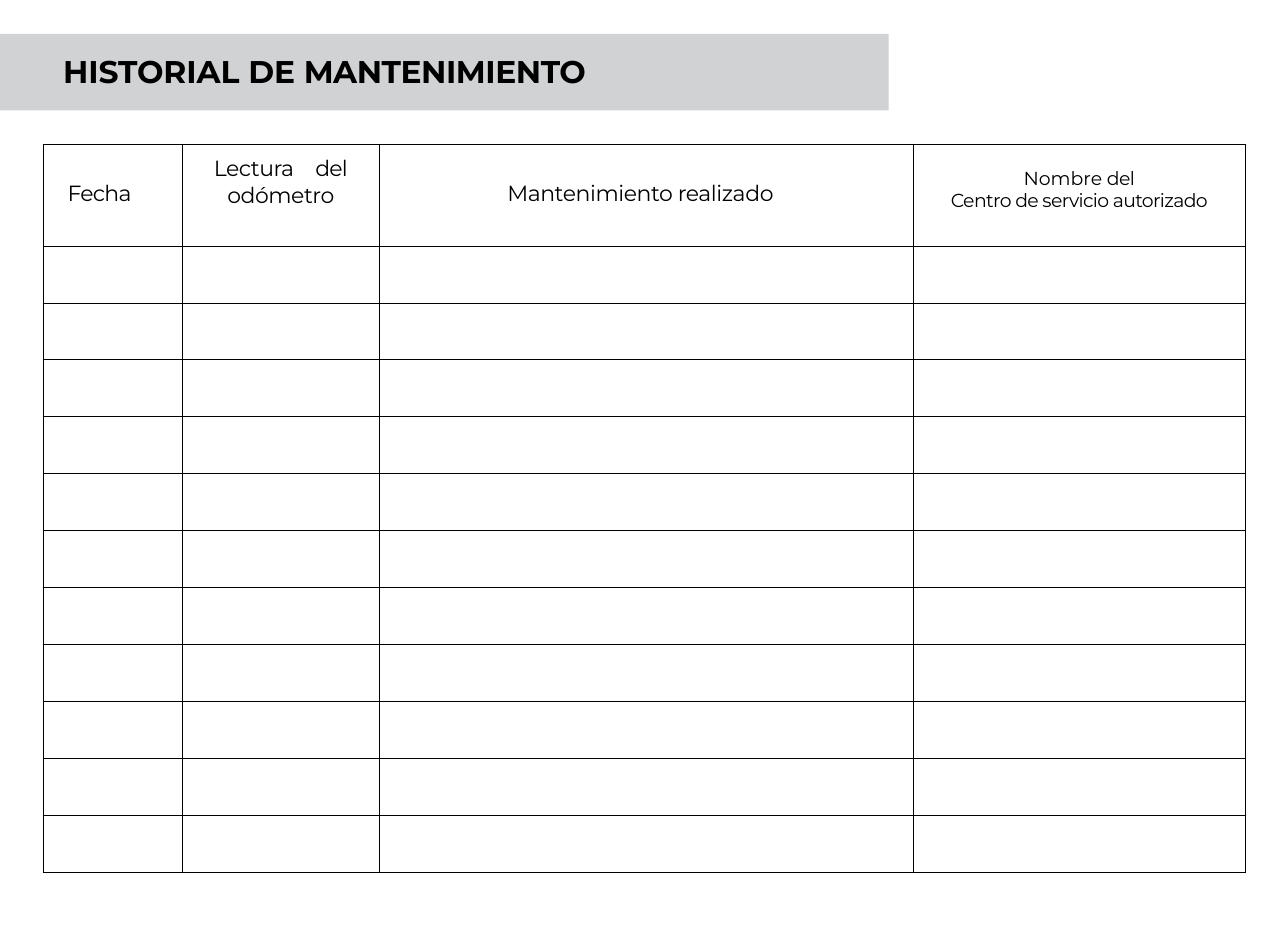
from dataclasses import dataclass

from lxml import etree
from pptx import Presentation
from pptx import util as u
from pptx.dml.color import RGBColor
from pptx.enum import shapes, text
from pptx.oxml.ns import qn

# Runs are (wording, letter spacing in points).
TITLE = [("HISTORIAL DE ", 0), ("MANTENIMIENTO", -0.1)]
# Each heading: lines of runs, type size, top margin, left margin (None = centred).
HEADINGS = [
    ([[("Fecha", -0.2)]], 7, 0.16, 0.11),
    ([[("Lectura", -0.1), (" ", 5), ("del", -0.2)], [("odómetro", -0.1)]], 7, 0.05, None),
    ([[("Mantenimiento realizado", -0.1)]], 7, 0.16, 0.57),
    ([[("Nombre ", 0), ("del", -0.2)],
      [("Centro de servicio autorizado", -0.2)]], 6, 0.1, None),
]
ENTRY_ROWS = 11

PAGE_W, PAGE_H = 5.71, 4.14
BAND = (0, 0.15, 3.94, 0.34)
TITLE_BOX = (0.28, 0.23, 2.35, 0.19)
TABLE_LEFT, TABLE_TOP, TABLE_H = 0.19, 0.64, 3.23
HEADER_H = 0.45
COLUMNS = [0.62, 0.87, 2.37, 1.47]


@dataclass(frozen=True)
class Theme:
    font: str = "Montserrat"
    ink: str = "000000"
    band: str = "D1D2D3"
    title_size: int = 10
    entry_size: int = 7
    rule: float = 0.25


THEME = Theme()


def inches(lengths):
    return [u.Inches(length) for length in lengths]


def write_runs(para, runs, size, bold=False):
    for wording, spacing in runs:
        span = para.add_run()
        span.text = wording
        span.font.name = THEME.font
        span.font.size = u.Pt(size)
        span.font.bold = bold
        span.font.color.rgb = RGBColor.from_string(THEME.ink)
        span.font._element.set("spc", str(round(spacing * 100)))


def draw_borders(cell):
    props = cell._tc.get_or_add_tcPr()
    for place, side in enumerate(("lnL", "lnR", "lnT", "lnB")):
        line = etree.Element(qn(f"a:{side}"), w=str(u.Pt(THEME.rule)))
        fill = etree.SubElement(line, qn("a:solidFill"))
        etree.SubElement(fill, qn("a:srgbClr"), val=THEME.ink)
        props.insert(place, line)


def add_title(page):
    band = page.shapes.add_shape(shapes.MSO_SHAPE.RECTANGLE, *inches(BAND))
    band.shadow.inherit = False
    band.fill.solid()
    band.fill.fore_color.rgb = RGBColor.from_string(THEME.band)
    band.line.fill.background()

    frame = page.shapes.add_textbox(*inches(TITLE_BOX)).text_frame
    frame.margin_left = frame.margin_right = frame.margin_top = frame.margin_bottom = 0
    write_runs(frame.paragraphs[0], TITLE, THEME.title_size, bold=True)


def fill_heading(cell, lines, size, top, left):
    cell.margin_top = u.Inches(top)
    cell.margin_left = u.Inches(left or 0)
    frame = cell.text_frame
    for number, runs in enumerate(lines):
        para = frame.add_paragraph() if number else frame.paragraphs[0]
        if left is None:
            para.alignment = text.PP_ALIGN.CENTER
        write_runs(para, runs, size)


def add_log(page):
    frame = page.shapes.add_table(
        ENTRY_ROWS + 1, len(COLUMNS),
        *inches((TABLE_LEFT, TABLE_TOP, sum(COLUMNS), TABLE_H)))
    log = frame.table
    log.first_row = log.horz_banding = False
    for column, width in zip(log.columns, COLUMNS):
        column.width = u.Inches(width)
    for number, row in enumerate(log.rows):
        row.height = u.Inches((TABLE_H - HEADER_H) / ENTRY_ROWS if number else HEADER_H)
    for cell in log.iter_cells():
        cell.margin_left = cell.margin_right = cell.margin_top = cell.margin_bottom = 0
        cell.fill.background()
        draw_borders(cell)
    for column, heading in enumerate(HEADINGS):
        fill_heading(log.cell(0, column), *heading)
        for row in range(1, ENTRY_ROWS + 1):
            para = log.cell(row, column).text_frame.paragraphs[0]
            etree.SubElement(para._p, qn("a:endParaRPr"), sz=str(THEME.entry_size * 100))


def main():
    deck = Presentation()
    deck.slide_width, deck.slide_height = inches((PAGE_W, PAGE_H))
    page = deck.slides.add_slide(deck.slide_layouts[6])
    add_title(page)
    add_log(page)
    deck.save("out.pptx")


if __name__ == "__main__":
    main()
